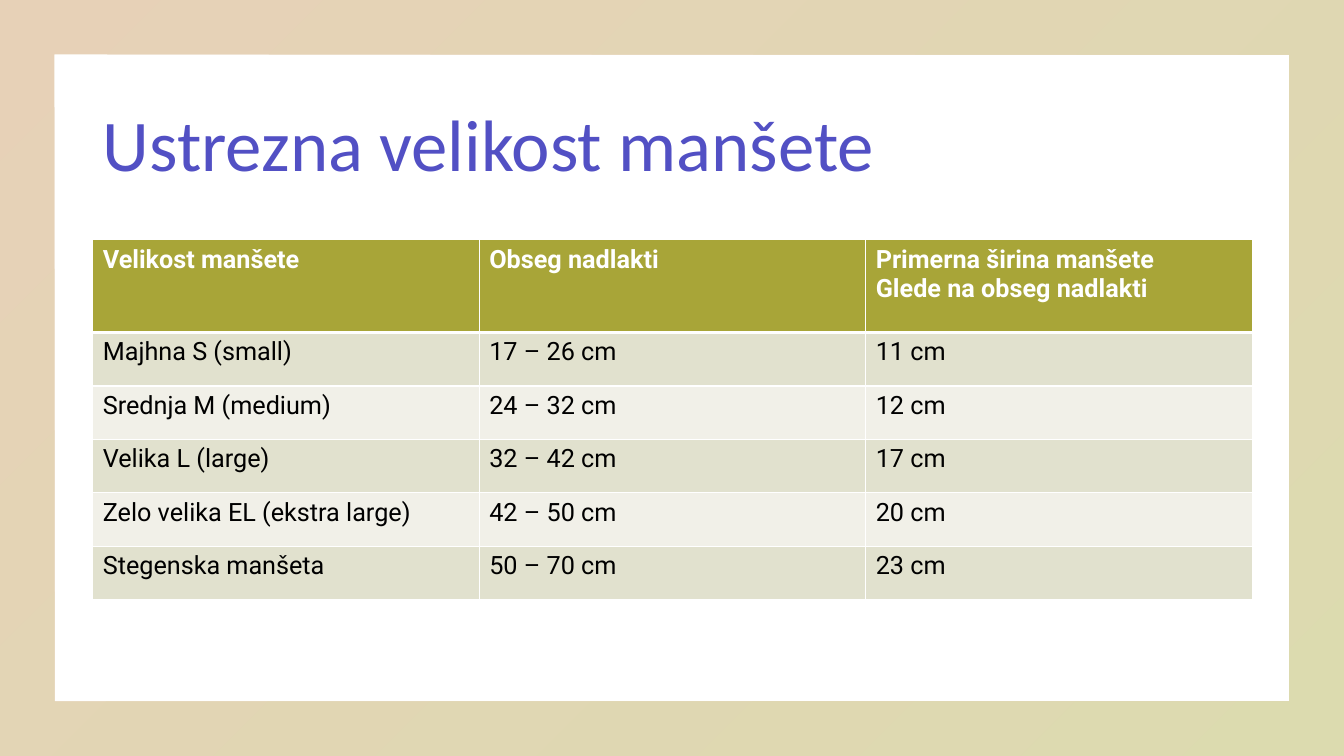
import pptx
import pptx.util
import pptx.oxml
from pptx.dml.color import RGBColor
from pptx.enum.shapes import MSO_SHAPE
from pptx.enum.text import MSO_ANCHOR, MSO_AUTO_SIZE, PP_ALIGN
from pptx.oxml.ns import qn

Inches, Pt = pptx.util.Inches, pptx.util.Pt

# Content
TITLE = "Ustrezna velikost manšete"
ROWS = [
    ("Velikost manšete", "Obseg nadlakti", "Primerna širina manšete\nGlede na obseg nadlakti"),
    ("Majhna S (small)", "17 – 26 cm", "11 cm"),
    ("Srednja M (medium)", "24 – 32 cm", "12 cm"),
    ("Velika L (large)", "32 – 42 cm", "17 cm"),
    ("Zelo velika EL (ekstra large)", "42 – 50 cm", "20 cm"),
    ("Stegenska manšeta", "50 – 70 cm", "23 cm"),
]
COLORS = {"title": "5250C4", "tan": "C38E4D", "olive": "A8A538", "dark": "E1E1CE",
          "light": "F1F0E8", "white": "FFFFFF", "black": "000000"}
LEFT, WIDTH = 0.92, 11.5
HEAD, ROW = 0.92, 0.53


def rgb(name):
    return RGBColor.from_string(COLORS[name])


def style(par, font, size, color, bold=False):
    for run in par.runs:
        run.font.name = font
        run.font.size = Pt(size)
        run.font.bold = bold
        run.font.color.rgb = rgb(color)


def border(cell, side, width):
    props = cell._tc.get_or_add_tcPr()
    line = props.makeelement(qn("a:" + side), {"w": str(Pt(width))})
    fill = pptx.oxml.parse_xml(
        '<a:solidFill xmlns:a="http://schemas.openxmlformats.org/drawingml/2006/main">'
        f'<a:srgbClr val="{COLORS["white"]}"/></a:solidFill>')
    line.append(fill)
    props.append(line)


# Slide
deck = pptx.Presentation()
deck.slide_width, deck.slide_height = Inches(13.33), Inches(7.5)
slide = deck.slides.add_slide(deck.slide_layouts[5])
slide.background.fill.solid()
slide.background.fill.fore_color.rgb = rgb("white")

# Title
title = slide.shapes.title
title.left, title.top = Inches(LEFT), Inches(0.74)
title.width, title.height = Inches(WIDTH), Inches(1.45)
box = title.text_frame
box.text = TITLE
box.word_wrap = True
box.auto_size = MSO_AUTO_SIZE.NONE
box.vertical_anchor = MSO_ANCHOR.MIDDLE
par = box.paragraphs[0]
par.alignment = PP_ALIGN.LEFT
par.line_spacing = 0.9
style(par, "Calibri", 52, "title")

# Translucent gradient frame behind the title
frame = slide.shapes.add_shape(MSO_SHAPE.FRAME, 0, 0, deck.slide_width, deck.slide_height)
frame.adjustments[0] = 0.072
frame.shadow.inherit = False
frame.line.fill.background()
frame.fill.gradient()
frame.fill.gradient_angle = 315
for stop, name in zip(frame.fill.gradient_stops, ("tan", "olive")):
    stop.color.rgb = rgb(name)
for tint in frame.element.spPr.iter(qn("a:srgbClr")):
    tint.append(tint.makeelement(qn("a:alpha"), {"val": "40000"}))
title.element.addprevious(frame.element)

# Table
count = len(ROWS[0])
heights = [HEAD] + [ROW] * (len(ROWS) - 1)
table = slide.shapes.add_table(len(ROWS), count, Inches(LEFT), Inches(2.38),
                               Inches(WIDTH), Inches(sum(heights))).table
for col in table.columns:
    col.width = Inches(WIDTH / count)
for r, texts in enumerate(ROWS):
    table.rows[r].height = Inches(heights[r])
    head = r == 0
    shade = "olive" if head else "dark" if r % 2 else "light"
    for c, text in enumerate(texts):
        cell = table.cell(r, c)
        cell.text_frame.text = text
        for par in cell.text_frame.paragraphs:
            style(par, "Roboto", 18, "white" if head else "black", head)
        for side in ("lnL", "lnR", "lnT", "lnB"):
            thick = (head and side == "lnB") or (r == 1 and side == "lnT")
            border(cell, side, 3 if thick else 1)
        cell.fill.solid()
        cell.fill.fore_color.rgb = rgb(shade)

deck.save("out.pptx")
